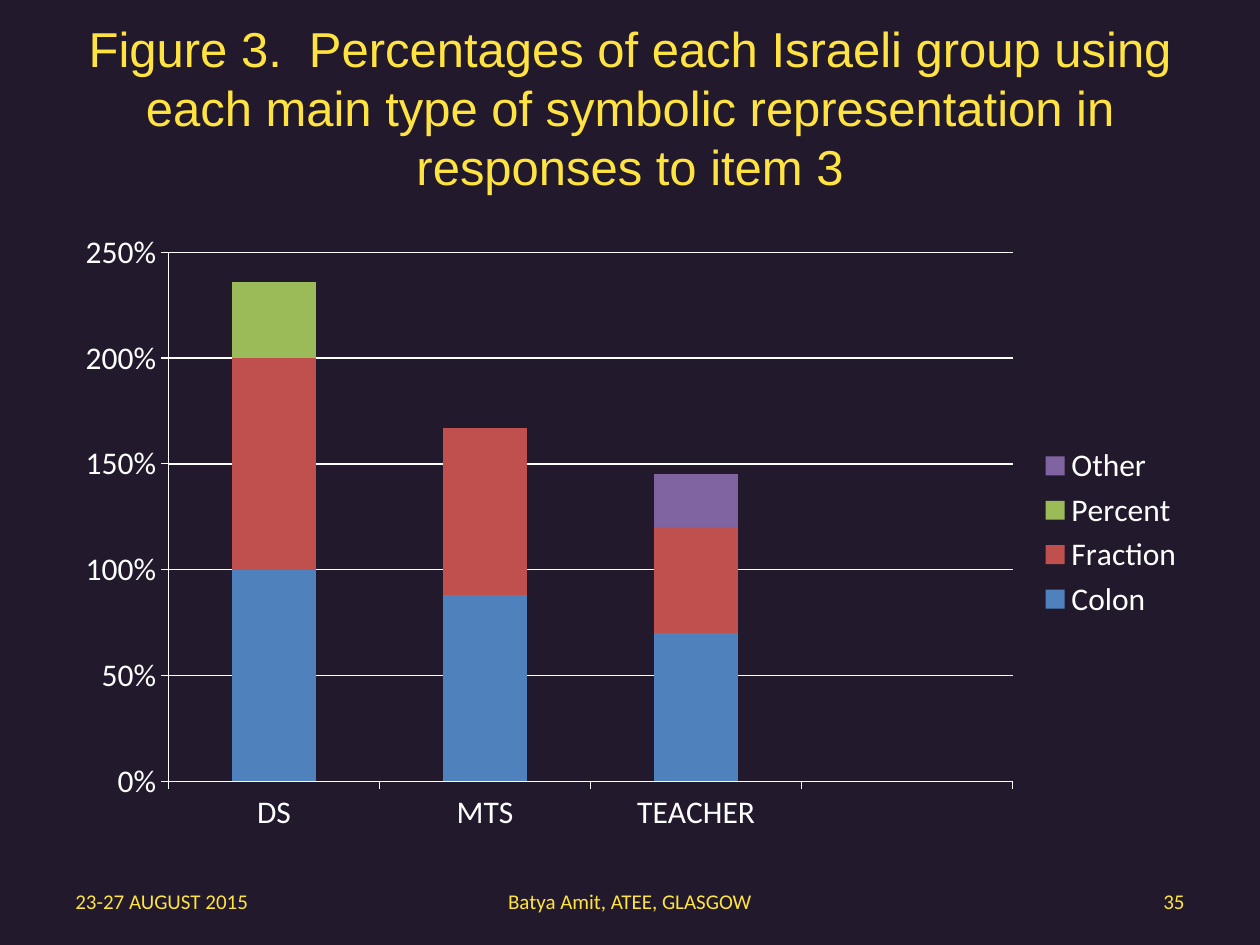
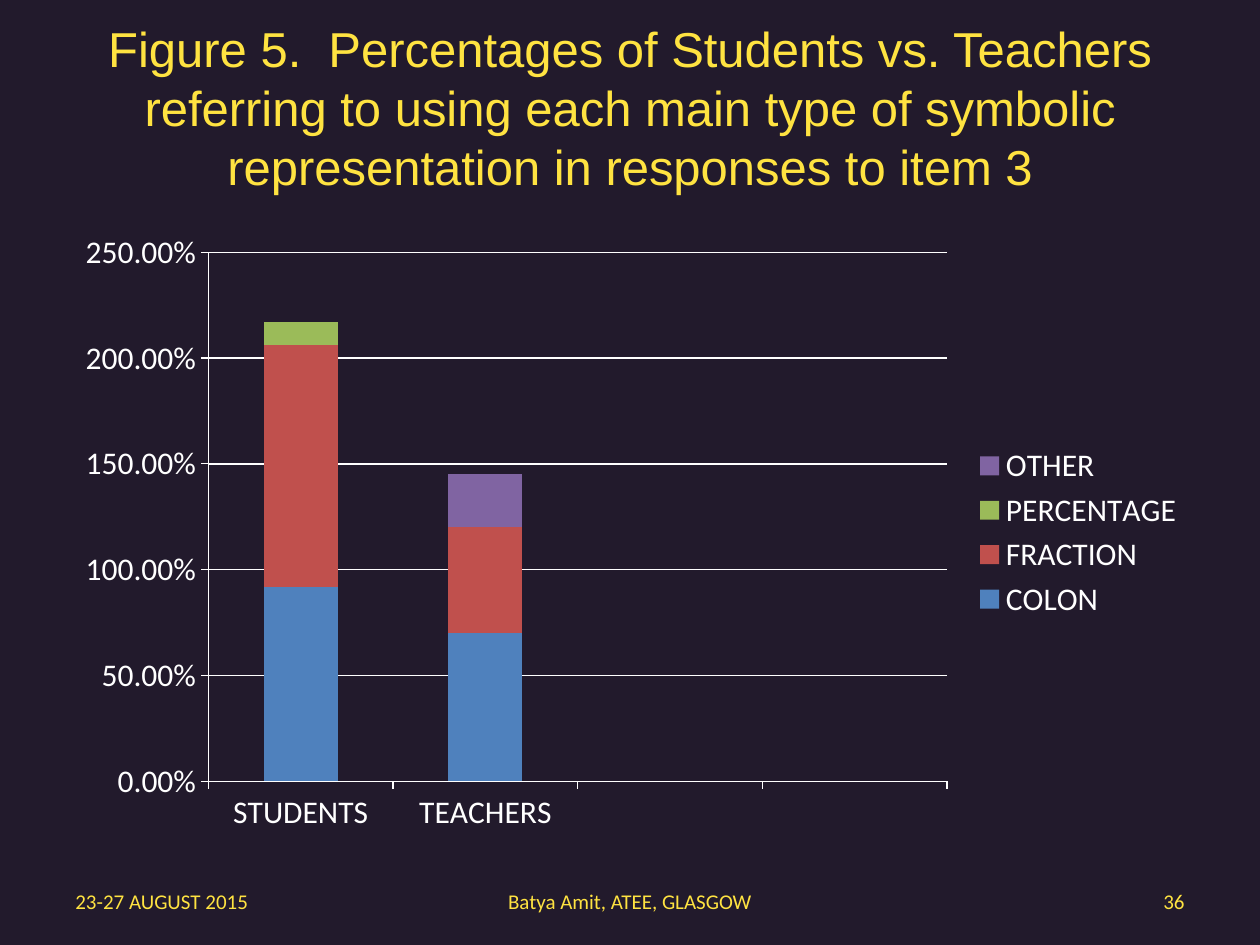
from pptx import Presentation
from pptx.chart.data import CategoryChartData
from pptx.dml.color import RGBColor
from pptx.enum.chart import XL_CHART_TYPE, XL_LEGEND_POSITION, XL_TICK_MARK
from pptx.enum.text import MSO_ANCHOR, MSO_AUTO_SIZE, PP_ALIGN
from pptx.util import Cm, Pt

STACKED = XL_CHART_TYPE.COLUMN_STACKED
LEGEND_RIGHT = XL_LEGEND_POSITION.RIGHT
TICK_OUT, TICK_NONE = XL_TICK_MARK.OUTSIDE, XL_TICK_MARK.NONE
MIDDLE, NO_AUTOFIT = MSO_ANCHOR.MIDDLE, MSO_AUTO_SIZE.NONE
LEFT, CENTER, RIGHT = PP_ALIGN.LEFT, PP_ALIGN.CENTER, PP_ALIGN.RIGHT

COLORS = {
    "background": "221A2C",
    "heading": "FFE341",
    "chart_text": "FFFFFF",
    "colon": "4F81BD",
    "fraction": "C0504D",
    "percent": "9BBB59",
    "other": "8064A2",
}
SYMBOL_COLORS = ("colon", "fraction", "percent", "other")

TITLE_FONT = {"name": "Arial", "size": Pt(28), "bold": False}
CHART_FONT = {"name": "Calibri", "size": Pt(18), "bold": False}
FOOTER_FONT = {"name": "Calibri", "size": Pt(12), "bold": False}
FRAME_FORMAT = {"word_wrap": True, "auto_size": NO_AUTOFIT,
                "vertical_anchor": MIDDLE}

MARGIN, CONTENT_WIDTH = Cm(1.27), Cm(22.86)
TITLE_BOX = {"left": MARGIN, "top": Cm(0.26),
             "width": CONTENT_WIDTH, "height": Cm(3.8)}
CHART_BOX = (MARGIN, Cm(4.45), CONTENT_WIDTH, Cm(12.57))
FOOTER_TOP, FOOTER_HEIGHT = Cm(17.65), Cm(1.02)

# Blank categories keep room free at the right of the bars
FIGURES = [
    {
        "title": "Figure 3.  Percentages of each Israeli group using each main "
                 "type of symbolic representation in responses to item 3",
        "page": "35",
        "number_format": "0%",
        "groups": ["DS", "MTS", "TEACHER", ""],
        "symbols": {
            "Colon": (1, 0.88, 0.7, None),
            "Fraction": (1, 0.79, 0.5, None),
            "Percent": (0.36, 0, 0, None),
            "Other": (0, 0, 0.25, None),
        },
    },
    {
        "title": "Figure 5.  Percentages of Students vs. Teachers referring to "
                 "using each main type of symbolic representation in responses "
                 "to item 3",
        "page": "36",
        "number_format": "0.00%",
        "groups": ["STUDENTS", "TEACHERS", "", ""],
        "symbols": {
            "COLON": (0.92, 0.7, None, None),
            "FRACTION": (1.14, 0.5, None, None),
            "PERCENTAGE": (0.11, 0, None, None),
            "OTHER": (0, 0.25, None, None),
        },
    },
]


def apply(target, values):
    for attribute, value in values.items():
        setattr(target, attribute, value)


def rgb(key):
    return RGBColor.from_string(COLORS[key])


def style_font(font, values, color):
    apply(font, values)
    font.color.rgb = rgb(color)


def write_text(frame, text, font, alignment):
    apply(frame, FRAME_FORMAT)
    paragraph = frame.paragraphs[0]
    paragraph.alignment = alignment
    run = paragraph.add_run()
    run.text = text
    style_font(run.font, font, "heading")


def add_title(slide, text):
    title = slide.shapes.title
    apply(title, TITLE_BOX)
    write_text(title.text_frame, text, TITLE_FONT, CENTER)


def add_footers(slide, page):
    for left, width, text, alignment in (
        (MARGIN, Cm(5.93), "23-27 AUGUST 2015", LEFT),
        (Cm(8.68), Cm(8.04), "Batya Amit, ATEE, GLASGOW", CENTER),
        (Cm(18.2), Cm(5.93), page, RIGHT),
    ):
        footer = slide.shapes.add_textbox(left, FOOTER_TOP, width, FOOTER_HEIGHT)
        write_text(footer.text_frame, text, FOOTER_FONT, alignment)


def style_line(line):
    line.color.rgb = rgb("chart_text")
    line.width = Pt(0.75)


def add_symbol_chart(slide, figure):
    data = CategoryChartData(number_format=figure["number_format"])
    data.categories = figure["groups"]
    for symbol, shares in figure["symbols"].items():
        data.add_series(symbol, shares)
    chart = slide.shapes.add_chart(STACKED, *CHART_BOX, data).chart
    style_font(chart.font, CHART_FONT, "chart_text")
    chart.has_title = False

    # Bars
    plot = chart.plots[0]
    apply(plot, {"gap_width": 150, "overlap": 100, "vary_by_categories": False})
    for series, color in zip(plot.series, SYMBOL_COLORS):
        series.format.fill.solid()
        series.format.fill.fore_color.rgb = rgb(color)

    # Axes
    share_axis = chart.value_axis
    for axis in (chart.category_axis, share_axis):
        apply(axis, {"major_tick_mark": TICK_OUT, "minor_tick_mark": TICK_NONE})
        style_line(axis.format.line)
    apply(share_axis, {"minimum_scale": 0, "maximum_scale": 2.5,
                       "major_unit": 0.5, "has_major_gridlines": True})
    style_line(share_axis.major_gridlines.format.line)
    apply(share_axis.tick_labels, {"number_format": figure["number_format"],
                                   "number_format_is_linked": False})

    # Legend
    chart.has_legend = True
    apply(chart.legend, {"position": LEGEND_RIGHT, "include_in_layout": False})


def main():
    presentation = Presentation()
    apply(presentation, {"slide_width": Cm(25.4), "slide_height": Cm(19.05)})
    background = presentation.slide_master.background.fill
    background.solid()
    background.fore_color.rgb = rgb("background")
    title_only = presentation.slide_layouts[5]

    for figure in FIGURES:
        slide = presentation.slides.add_slide(title_only)
        add_title(slide, figure["title"])
        add_symbol_chart(slide, figure)
        add_footers(slide, figure["page"])

    presentation.save("out.pptx")


if __name__ == "__main__":
    main()
